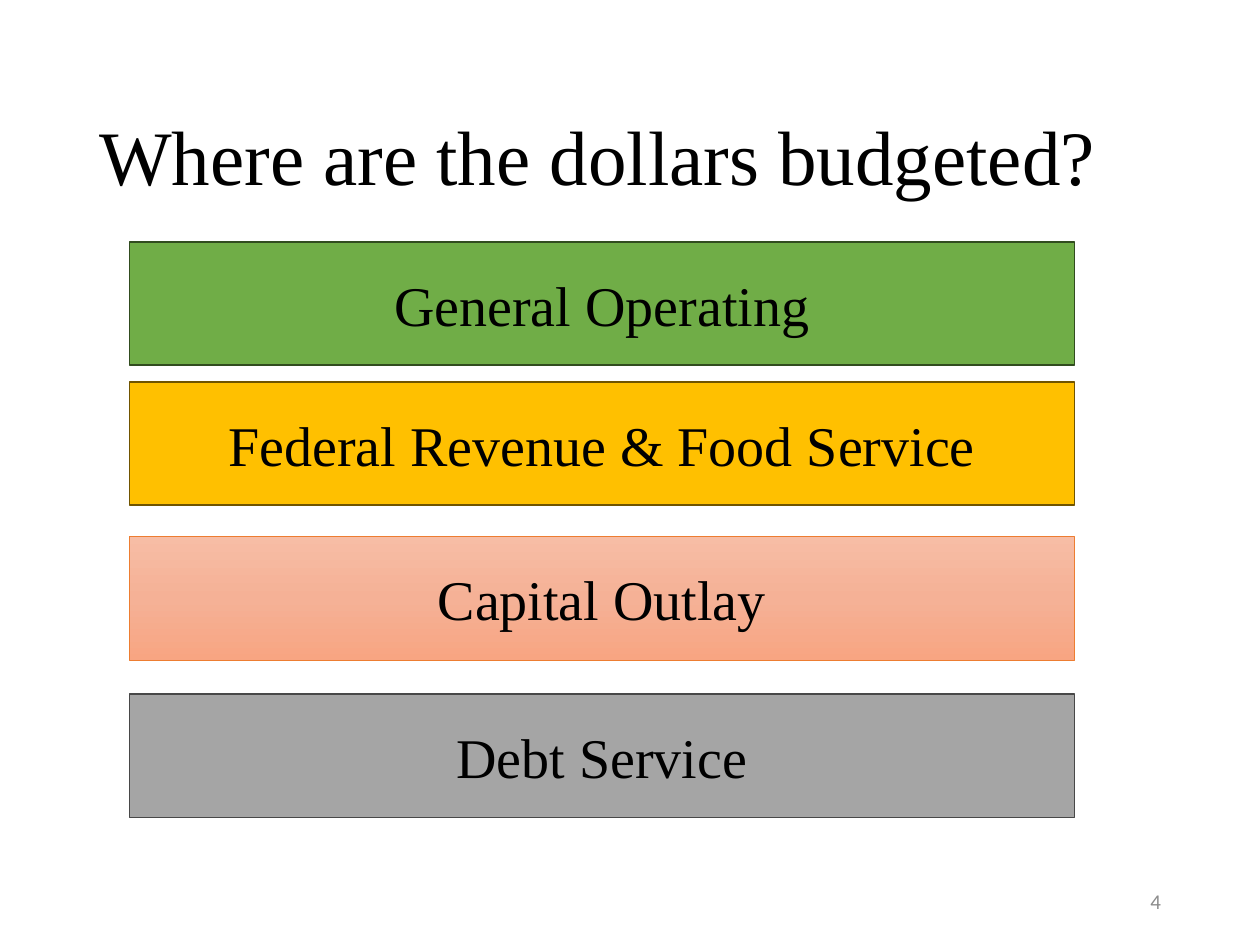
from copy import deepcopy

from pptx import Presentation
from pptx.dml.color import RGBColor
from pptx.enum.shapes import MSO_SHAPE
from pptx.enum.text import MSO_ANCHOR, MSO_AUTO_SIZE, PP_ALIGN
from pptx.util import Pt

RECTANGLE = MSO_SHAPE.RECTANGLE
TOP, MIDDLE = MSO_ANCHOR.TOP, MSO_ANCHOR.MIDDLE
LEFT, CENTER, RIGHT = PP_ALIGN.LEFT, PP_ALIGN.CENTER, PP_ALIGN.RIGHT
TITLE_ONLY = 5
SERIF, SANS = "Times New Roman", "Calibri"

COLORS = {
    "text": "000000", "page": "8C8C8C",
    "green": "70AD47", "green_edge": "314C1F",
    "gold": "FFC000", "gold_edge": "705400",
    "peach_top": "F7BDA5", "peach_mid": "F5B196", "peach_end": "F8A582",
    "orange_edge": "ED7D31",
    "gray": "A5A5A5", "gray_edge": "484848",
}

# Label, top, fill colours (several make a gradient), edge colour, edge width
FUNDS = [
    ("General Operating", 138.25, ["green"], "green_edge", 1),
    ("Federal Revenue & Food Service", 218.25, ["gold"], "gold_edge", 1),
    ("Capital Outlay", 306.75, ["peach_top", "peach_mid", "peach_end"],
     "orange_edge", 0.5),
    ("Debt Service", 396.75, ["gray"], "gray_edge", 1),
]


def color(name):
    return RGBColor.from_string(COLORS[name])


def write(frame, text, size, font, color_name, align, anchor):
    frame.word_wrap = True
    frame.vertical_anchor = anchor
    paragraph = frame.paragraphs[0]
    paragraph.alignment = align
    run = paragraph.add_run()
    run.text = text
    run.font.size = Pt(size)
    run.font.name = font
    run.font.color.rgb = color(color_name)
    return paragraph


def paint(fill, names):
    if len(names) == 1:
        fill.solid()
        fill.fore_color.rgb = color(names[0])
        return
    fill.gradient()
    fill.gradient_angle = 270
    # Extend the two default stops to one per colour
    stop_list = fill._fill._gradFill.gsLst
    for _ in names[2:]:
        stop_list.append(deepcopy(stop_list[0]))
    for index, (stop, name) in enumerate(zip(fill.gradient_stops, names)):
        stop.position = index / (len(names) - 1)
        stop.color.rgb = color(name)


def add_title(slide, left, top, width, height):
    title = slide.shapes.title
    title.left, title.top = Pt(left), Pt(top)
    title.width, title.height = Pt(width), Pt(height)
    frame = title.text_frame
    frame.auto_size = MSO_AUTO_SIZE.NONE
    frame.margin_top = Pt(39)
    question = write(frame, "Where are the dollars budgeted?",
                     44, SERIF, "text", LEFT, TOP)
    question.line_spacing = 0.9


def add_fund_bar(slide, fund, left, width, height):
    label, top, fills, edge, edge_width = fund
    bar = slide.shapes.add_shape(RECTANGLE, Pt(left), Pt(top),
                                 Pt(width), Pt(height))
    bar.shadow.inherit = False
    paint(bar.fill, fills)
    bar.line.color.rgb = color(edge)
    bar.line.width = Pt(edge_width)
    write(bar.text_frame, label, 32, SERIF, "text", CENTER, MIDDLE)


def add_page_number(slide, left, top, width, height):
    page = slide.shapes.add_textbox(Pt(left), Pt(top), Pt(width), Pt(height))
    write(page.text_frame, "4", 12, SANS, "page", RIGHT, MIDDLE)


def main():
    deck = Presentation()
    deck.slide_width, deck.slide_height = Pt(720), Pt(540)
    slide = deck.slides.add_slide(deck.slide_layouts[TITLE_ONLY])

    # Title, behind the bars
    add_title(slide, 49.5, 28.75, 621, 453.5)

    # Budget funds
    for fund in FUNDS:
        add_fund_bar(slide, fund, 74, 540, 70.5)

    # Footer
    add_page_number(slide, 508.5, 500.5, 162, 28.75)

    deck.save("out.pptx")


if __name__ == "__main__":
    main()
